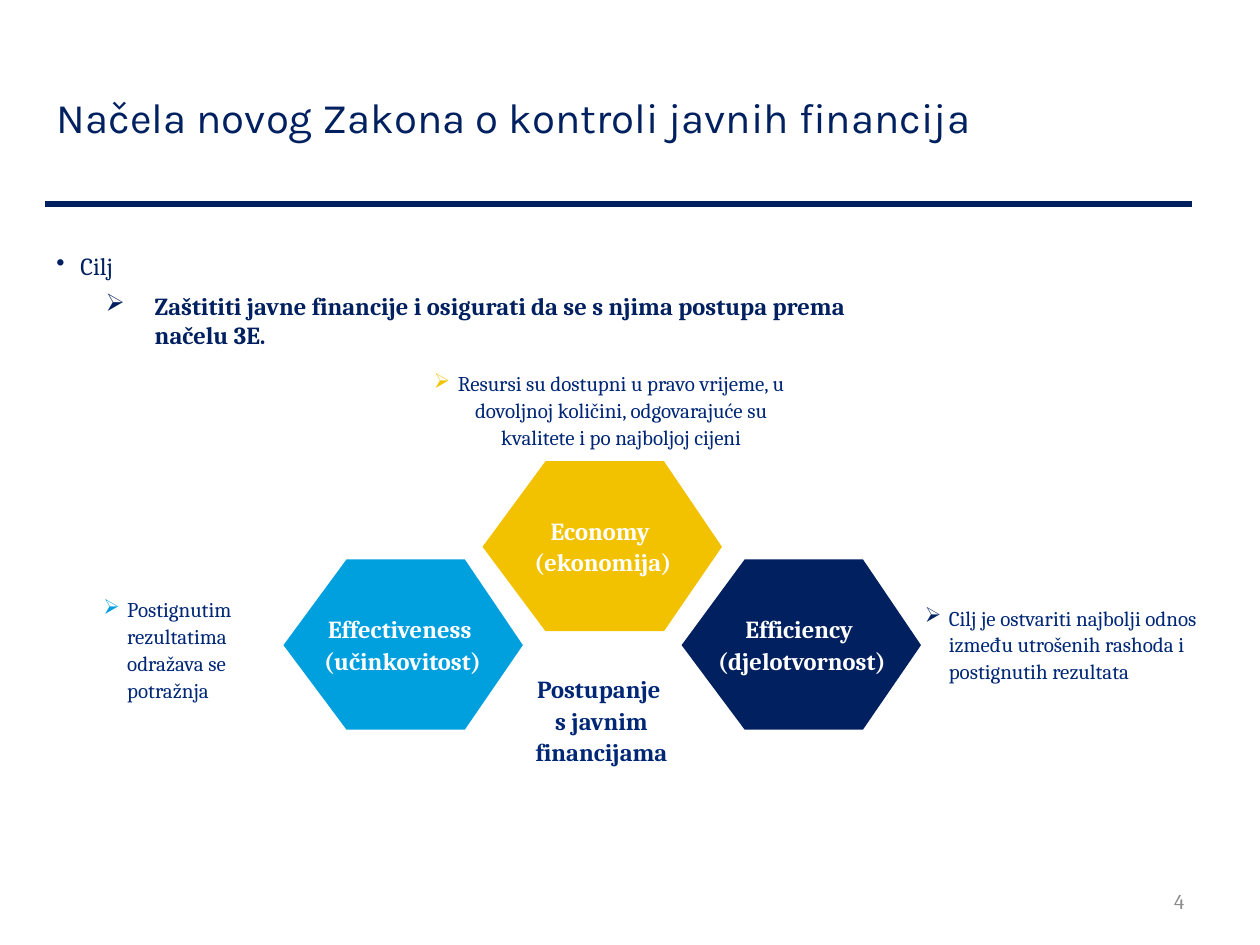
"""Build the slide on the 3E principles of the public finance control act."""
from dataclasses import dataclass

import pptx
import pptx.dml.color
import pptx.enum.shapes
import pptx.enum.text
import pptx.oxml
import pptx.oxml.ns
import pptx.util
from pptx.util import Inches


@dataclass(frozen=True)
class Theme:
    navy: str = "002060"
    text: str = "002776"
    blue: str = "00A0DE"
    yellow: str = "F2C200"
    white: str = "FFFFFF"
    grey: str = "8C8C8C"
    heading_font: str = "Karla"
    body_font: str = "Cambria"
    title_size: int = 24
    body_size: int = 14
    note_size: int = 12


theme = Theme()
rgb = pptx.dml.color.RGBColor.from_string
align = pptx.enum.text.PP_ALIGN
middle = pptx.enum.text.MSO_ANCHOR.MIDDLE


def write(shape, lines, size, color, alignment=align.LEFT, bold=False, font=theme.body_font,
          inset=0, spacing=None, wrap=True, anchor=middle):
    """Fill a shape with formatted paragraphs."""
    frame = shape.text_frame
    frame.text = "\n".join(lines)
    frame.auto_size = pptx.enum.text.MSO_AUTO_SIZE.NONE
    frame.word_wrap = wrap
    frame.vertical_anchor = anchor
    frame.margin_left = frame.margin_right = Inches(inset)
    frame.margin_top = frame.margin_bottom = Inches(inset / 2)
    for paragraph in frame.paragraphs:
        paragraph.alignment = alignment
        paragraph.line_spacing = spacing
        for run in paragraph.runs:
            run.font.name = font
            run.font.size = pptx.util.Pt(size)
            run.font.bold = bold
            run.font.color.rgb = rgb(color)
    return frame


def add_bullet(paragraph, mark, color, left, hanging):
    """Give a paragraph a coloured bullet and a hanging indent."""
    properties = paragraph._p.get_or_add_pPr()
    properties.set("marL", str(Inches(left)))
    properties.set("indent", str(-Inches(hanging)))
    namespace = pptx.oxml.ns.nsdecls("a")
    for xml in (f'<a:buClr {namespace}><a:srgbClr val="{color}"/></a:buClr>',
                f'<a:buChar {namespace} char="{mark}"/>'):
        properties.append(pptx.oxml.parse_xml(xml))


presentation = pptx.Presentation()
presentation.slide_width, presentation.slide_height = Inches(10), Inches(7.5)
slide = presentation.slides.add_slide(presentation.slide_layouts[5])
shapes = slide.shapes

title = shapes.title
title.left, title.top, title.width, title.height = map(Inches, (0.35, 0.3, 9.15, 1.25))
write(title, ["Načela novog Zakona o kontroli javnih financija"], theme.title_size, theme.navy,
      font=theme.heading_font, inset=0.1)

title_rule = shapes.add_connector(pptx.enum.shapes.MSO_CONNECTOR.STRAIGHT,
                                  Inches(0.36), Inches(1.62), Inches(9.46), Inches(1.62))
title_rule.line.color.rgb = rgb(theme.navy)
title_rule.line.width = pptx.util.Pt(3)
title_rule._element.spPr.append(
    pptx.oxml.parse_xml(f'<a:effectLst {pptx.oxml.ns.nsdecls("a")}/>'))

goal = shapes.add_textbox(*map(Inches, (0.35, 1.94, 9.13, 0.9)))
goal_frame = write(
    goal,
    ["Cilj", "Zaštititi javne financije i osigurati da se s njima postupa prema \vnačelu 3E."],
    theme.body_size, theme.navy, inset=0.1, anchor=pptx.enum.text.MSO_ANCHOR.TOP)
goal_levels = [("•", 0.19, 0.19, False), ("➢", 0.78, 0.39, True)]
for paragraph, (mark, left, hanging, bold) in zip(goal_frame.paragraphs, goal_levels):
    paragraph.space_before = paragraph.space_after = pptx.util.Pt(3)
    add_bullet(paragraph, mark, theme.navy, left, hanging)
    for run in paragraph.runs:
        run.font.bold = bold

principles = [
    (2.25, 4.44, theme.blue, ["Effectiveness ", "(učinkovitost)"], 2.55, 1.29),
    (3.83, 3.66, theme.yellow, ["Economy ", "(ekonomija)"], 4.22, 1.13),
    (5.41, 4.44, theme.navy, ["Efficiency ", "(djelotvornost)"], 5.67, 1.39),
]
hexagon_corners = [(1.44, 0), (1.9, 0.68), (1.44, 1.35), (0.5, 1.35), (0, 0.68)]
for left, top, color, lines, label_left, label_width in principles:
    outline = shapes.build_freeform(Inches(left + 0.5), Inches(top))
    outline.add_line_segments([(Inches(left + x), Inches(top + y)) for x, y in hexagon_corners])
    hexagon = outline.convert_to_shape()
    label = shapes.add_shape(pptx.enum.shapes.MSO_SHAPE.RECTANGLE,
                             *map(Inches, (label_left, top + 0.43, label_width, 0.48)))
    for part in (hexagon, label):
        part.shadow.inherit = False
        part.fill.solid()
        part.fill.fore_color.rgb = rgb(color)
        part.line.fill.background()
    write(label, lines, theme.body_size, theme.white, align.CENTER, True,
          spacing=1.06, wrap=False)

handling = shapes.add_textbox(*map(Inches, (4.14, 5.45, 1.27, 0.5)))
write(handling, ["Postupanje ", "s javnim financijama"], theme.body_size, theme.text,
      align.CENTER, True, spacing=1.06)
handling.top = Inches(5.46)

explanations = [
    ((0.82, 4.72, 1.1, 0.86), theme.blue, align.LEFT,
     "Postignutim rezultatima odražava se potražnja"),
    ((7.34, 4.68, 2.22, 0.86), theme.navy, align.LEFT,
     "Cilj je ostvariti najbolji odnos između utrošenih rashoda i postignutih rezultata"),
    ((3.33, 2.93, 3.01, 0.64), theme.yellow, align.CENTER,
     "Resursi su dostupni u pravo vrijeme, u dovoljnoj količini, odgovarajuće su "
     "kvalitete i po najboljoj cijeni"),
]
for place, color, alignment, sentence in explanations:
    explanation = shapes.add_textbox(*map(Inches, place))
    frame = write(explanation, [sentence], theme.note_size, theme.text, alignment, spacing=1.06)
    add_bullet(frame.paragraphs[0], "➢", color, 0.19, 0.19)

page_number = shapes.add_textbox(*map(Inches, (7.17, 6.95, 2.33, 0.4)))
write(page_number, ["4"], theme.note_size, theme.grey, align.RIGHT, inset=0.1)

presentation.save("out.pptx")
